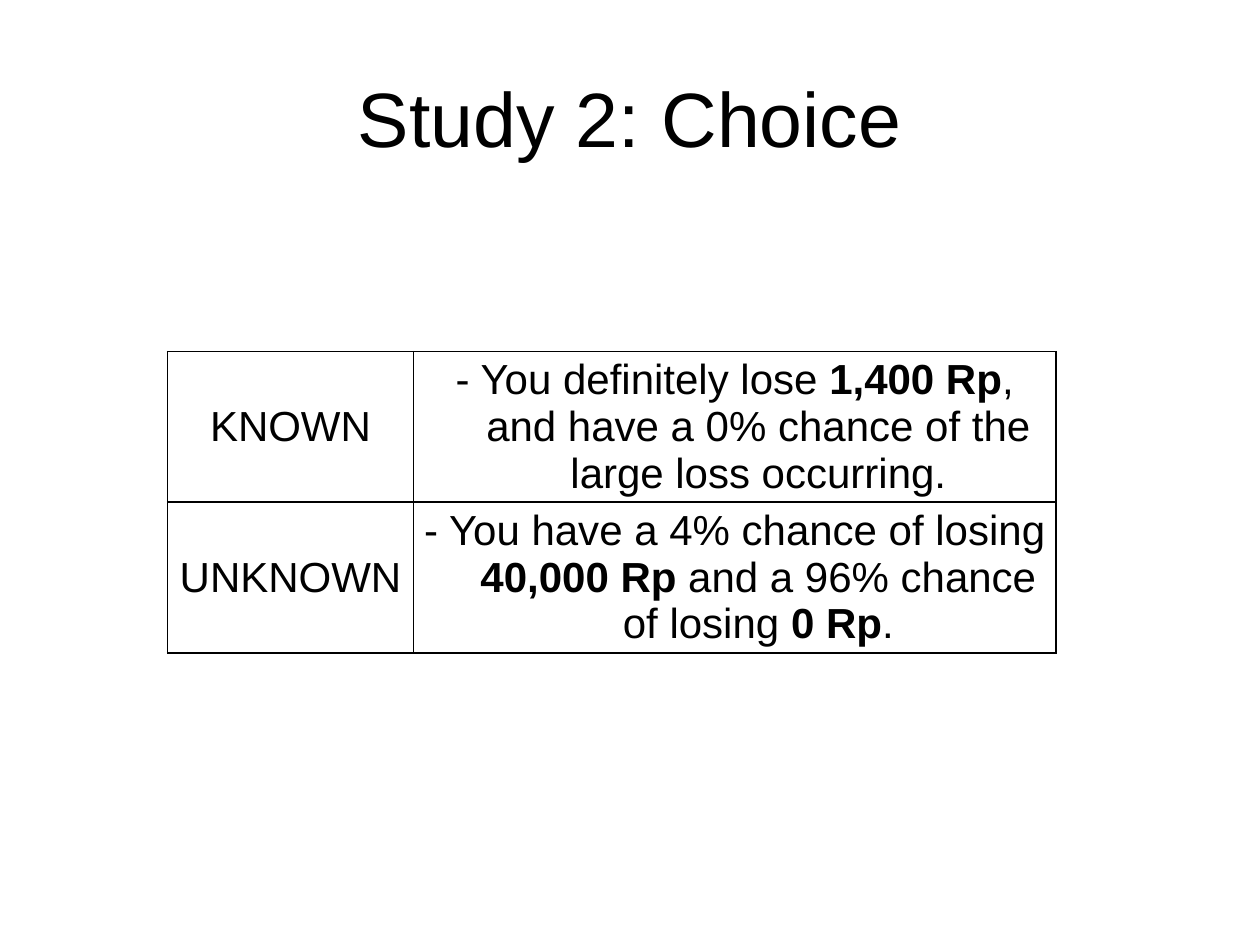
from lxml.etree import SubElement
from pptx import Presentation
from pptx.dml.color import RGBColor
from pptx.enum.text import MSO_ANCHOR as Anchor, PP_ALIGN as Align
from pptx.oxml.ns import qn
from pptx.util import Pt

TITLE = "Study 2: Choice"
ROWS = [
    ([("KNOWN", False)],
     [("- You definitely lose ", False), ("1,400 Rp", True),
      (", and have a 0% chance of the large loss occurring.", False)]),
    ([("UNKNOWN", False)],
     [("- You have a 4% chance of losing ", False), ("40,000 Rp", True),
      (" and a 96% chance of losing ", False), ("0 Rp", True), (".", False)]),
]
COL_WIDTHS = [140.4, 367.2]
ROW_HEIGHT = 85.7
LEFT, TOP = 95.8, 200.9
INDENT = 27
BLACK = "000000"


def color(value):
    return RGBColor.from_string(value)


def style(r, size, bold=False):
    r.font.name = "Arial"
    r.font.size = Pt(size)
    r.font.bold = bold
    r.font.color.rgb = color(BLACK)


def add_borders(cell):
    tc_pr = cell._tc.get_or_add_tcPr()
    for side in ("lnL", "lnR", "lnT", "lnB"):
        ln = SubElement(tc_pr, qn(f"a:{side}"), w=str(Pt(1)))
        fill = SubElement(ln, qn("a:solidFill"))
        SubElement(fill, qn("a:srgbClr"), val=BLACK)


def fill_cell(cell, runs):
    add_borders(cell)
    cell.fill.background()
    cell.vertical_anchor = Anchor.MIDDLE
    cell.margin_left = cell.margin_right = Pt(5)
    cell.margin_top = cell.margin_bottom = Pt(2.9)
    p = cell.text_frame.paragraphs[0]
    p.alignment = Align.CENTER
    p_pr = p._p.get_or_add_pPr()
    p_pr.set("marL", str(Pt(INDENT)))
    p_pr.set("indent", str(Pt(-INDENT)))
    for text, bold in runs:
        r = p.add_run()
        r.text = text
        style(r, 24, bold)


prs = Presentation()
prs.slide_width, prs.slide_height = Pt(720), Pt(540)
slide = prs.slides.add_slide(prs.slide_layouts[5])

title = slide.shapes.title
title.left, title.top, title.width, title.height = Pt(36), Pt(21.6), Pt(648), Pt(90)
tf = title.text_frame
tf.text = TITLE
tf.vertical_anchor = Anchor.MIDDLE
tf.paragraphs[0].alignment = Align.CENTER
style(tf.paragraphs[0].runs[0], 44)

table = slide.shapes.add_table(
    len(ROWS), len(COL_WIDTHS), Pt(LEFT), Pt(TOP),
    Pt(sum(COL_WIDTHS)), Pt(ROW_HEIGHT * len(ROWS))).table
table.first_row = table.horz_banding = False
for column, width in zip(table.columns, COL_WIDTHS):
    column.width = Pt(width)
for i, row in enumerate(ROWS):
    table.rows[i].height = Pt(ROW_HEIGHT)
    for j, runs in enumerate(row):
        fill_cell(table.cell(i, j), runs)

prs.save("out.pptx")
